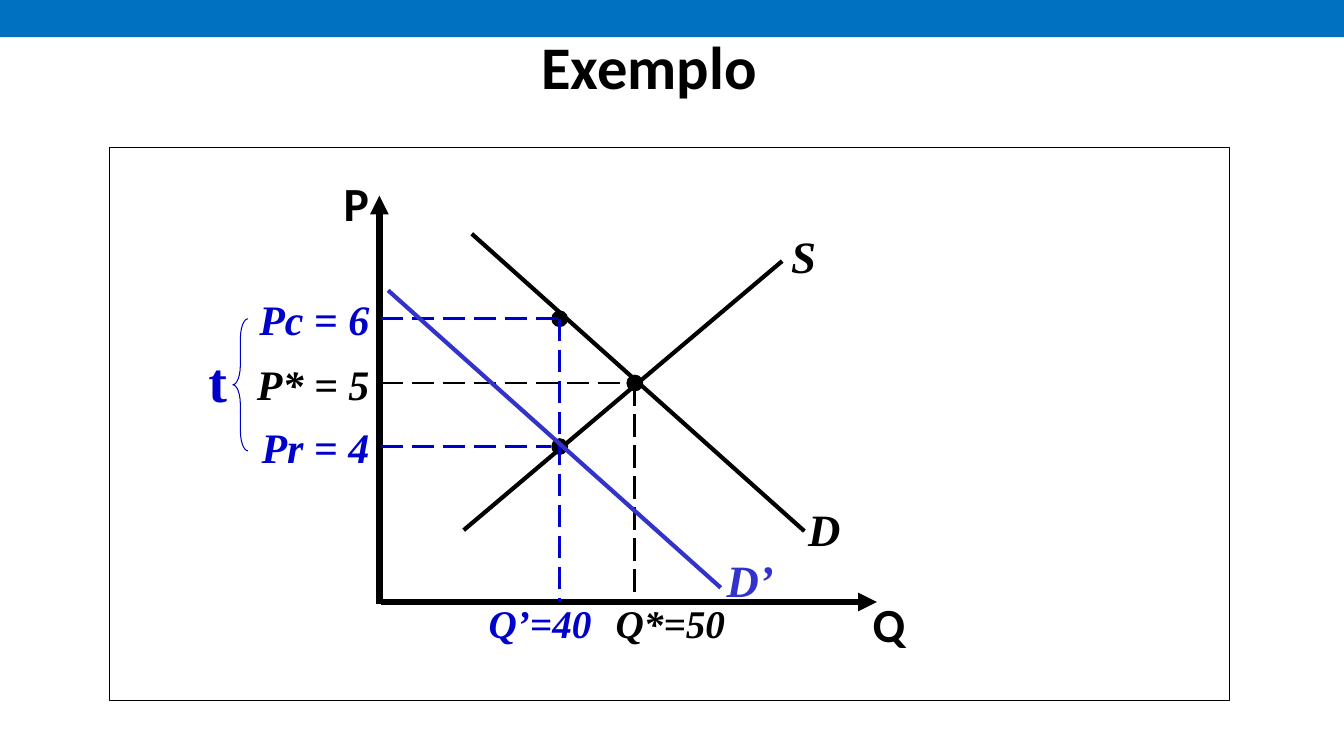
from pptx import Presentation
from pptx.dml.color import RGBColor
from pptx.enum.dml import MSO_LINE_DASH_STYLE as Dash
from pptx.enum.shapes import MSO_CONNECTOR, MSO_SHAPE as Shape
from pptx.enum.text import MSO_ANCHOR, MSO_AUTO_SIZE as Auto, PP_ALIGN as Align
from pptx.oxml.ns import qn
from pptx.util import Pt
from lxml.etree import SubElement

BLACK = RGBColor(0, 0, 0)
WHITE = RGBColor(255, 255, 255)
BAND = RGBColor(0x00, 0x70, 0xC0)
BLUE = RGBColor(0x00, 0x00, 0xCC)
VIOLET = RGBColor(0x33, 0x33, 0xCC)
SANS, SERIF = "Calibri", "Times New Roman"

# Chart geometry, in points
AXIS_X, AXIS_Y = 271, 430
AXIS_TOP, AXIS_END = 139.7, 626.4
PC, PSTAR, PR = 227.7, 273.6, 319
QTAX, QSTAR = 399.8, 453.5
DOT = 11
SUPPLY = (331.2, 378.7, 558.7, 186.5)
DEMAND = (337, 167, 574.6, 379.4)
SHIFT = (-59.8, 40.4)

# text, left, top, width, height, size, font, colour, italic
LABELS = [
    ("D", 570.2, 355, 37.4, 46, 32, SERIF, BLACK, True),
    ("S", 558, 159.8, 32.4, 46, 32, SERIF, BLACK, True),
    ("D’", 511.9, 391, 48.2, 46, 32, SERIF, VIOLET, True),
    ("P", 238.3, 121, 32.4, 48.2, 34, SANS, BLACK, False),
    ("Q", 616.3, 421.2, 38.2, 48.2, 34, SANS, BLACK, False),
    ("t", 141.8, 244, 28, 55.4, 40, SERIF, BLUE, False),
    ("Q*=50", 432.7, 424.8, 95.8, 41, 28, SERIF, BLACK, True),
    ("Q’=40", 342, 424.8, 95.8, 41, 28, SERIF, BLUE, True),
]
# text, level, colour
PRICES = [("Pc = 6", PC, BLUE), ("P* = 5", PSTAR, BLACK), ("Pr = 4", PR, BLUE)]

deck = Presentation()
deck.slide_width, deck.slide_height = Pt(960), Pt(540)
slide = deck.slides.add_slide(deck.slide_layouts[6])
shapes = slide.shapes


def form(kind, box, fill=None, edge=None, width=0.75):
    item = shapes.add_shape(kind, *map(Pt, box))
    item.shadow.inherit = False
    if fill is None:
        item.fill.background()
    else:
        item.fill.solid()
        item.fill.fore_color.rgb = fill
    if edge is None:
        item.line.fill.background()
    else:
        item.line.color.rgb = edge
        item.line.width = Pt(width)
    return item


def line(ends, color, width, dash=False, arrow=False):
    item = shapes.add_connector(MSO_CONNECTOR.STRAIGHT, *map(Pt, ends))
    item.line.color.rgb = color
    item.line.width = Pt(width)
    if dash:
        item.line.dash_style = Dash.LONG_DASH
    props = item._element.spPr
    if arrow:
        SubElement(props.find(qn("a:ln")), qn("a:tailEnd"), type="triangle")
    SubElement(props, qn("a:effectLst"))


def label(text, left, top, width, height, size, font, color, italic,
          align=Align.LEFT):
    box = shapes.add_textbox(*map(Pt, (left, top, width, height)))
    frame = box.text_frame
    frame.text = text
    frame.word_wrap = width > 60
    frame.auto_size = Auto.SHAPE_TO_FIT_TEXT
    para = frame.paragraphs[0]
    para.alignment = align
    face = para.runs[0].font
    face.name, face.size = font, Pt(size)
    face.bold, face.italic = True, italic
    face.color.rgb = color
    return frame


def guides(price, amount, color):
    """Dashed lines from a point on the chart to both axes."""
    line((AXIS_X + 1, price, amount, price), color, 2, dash=True)
    line((amount, price, amount, AXIS_Y), color, 2, dash=True)


form(Shape.RECTANGLE, (0, 0, 960, 26.6), BAND)
form(Shape.RECTANGLE, (78.5, 105.1, 800, 395.3), WHITE, BLACK)
title = label("Exemplo", 17.3, 20.9, 892.8, 58.3, 43.2, SANS, BLACK, False,
              Align.CENTER)
title.auto_size = Auto.NONE
title.vertical_anchor = MSO_ANCHOR.MIDDLE
title.paragraphs[0].line_spacing = 0.9

line(SUPPLY, BLACK, 3)
line(DEMAND, BLACK, 3)
line((AXIS_X, AXIS_Y + 1.5, AXIS_X, AXIS_TOP), BLACK, 4.5, arrow=True)
guides(PSTAR, QSTAR, BLACK)
line((AXIS_X + 1, AXIS_Y, AXIS_END, AXIS_Y), BLACK, 4.5, arrow=True)
for x, y in ((QSTAR, PSTAR), (QTAX, PR), (QTAX, PC)):
    form(Shape.OVAL, (x - DOT / 2, y - DOT / 2, DOT, DOT), BLACK, BLACK, 1)

guides(PC, QTAX, BLUE)
line((AXIS_X + 1, PR, QTAX - 6, PR), BLUE, 2, dash=True)
brace = form(Shape.LEFT_BRACE, (166.3, PC, 10.8, 94.3), edge=BLUE)
brace.adjustments[0] = 1.31
line([end + step for end, step in zip(DEMAND, SHIFT * 2)], VIOLET, 3)

for text, level, color in PRICES:
    label(text, 171, level - 21.3, 100, 43.2, 30, SERIF, color, True,
          Align.RIGHT)
for entry in LABELS:
    label(*entry)

deck.save("out.pptx")
